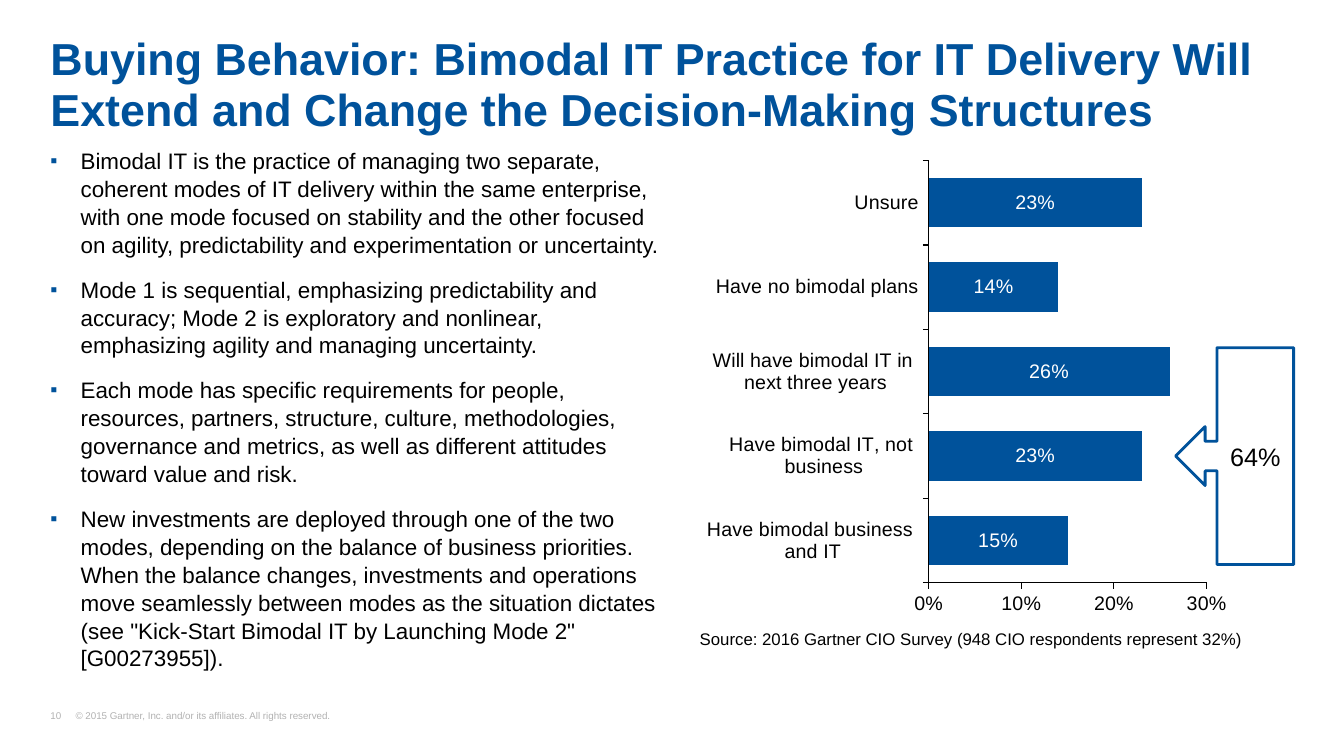
from lxml.etree import SubElement
from pptx import Presentation
from pptx.chart.data import CategoryChartData
from pptx.dml.color import RGBColor
from pptx.enum.chart import XL_CHART_TYPE, XL_LABEL_POSITION, XL_TICK_MARK
from pptx.enum.shapes import MSO_SHAPE
from pptx.enum.text import MSO_ANCHOR, PP_ALIGN
from pptx.oxml import parse_xml
from pptx.oxml.ns import nsdecls, qn
from pptx.util import Inches, Pt

BLUE = RGBColor(0x00, 0x52, 0x9B)
BLACK = RGBColor(0x00, 0x00, 0x00)
WHITE = RGBColor(0xFF, 0xFF, 0xFF)
GRAY = RGBColor(0xB2, 0xB2, 0xB2)

deck = Presentation()
deck.slide_width, deck.slide_height = Inches(13.33), Inches(7.5)
page = deck.slides.add_slide(deck.slide_layouts[6])

# Left edges of the two halves and top of the content, in percent of the slide
LEFT, RIGHT, TOP = 3.75, 52.06, 19.33


def share(left, top, width, height):
    """Turn percentages of the slide into lengths."""
    across, down = deck.slide_width / 100, deck.slide_height / 100
    return [int(left * across), int(top * down), int(width * across), int(height * down)]


def write(shape, lines, size, color, bold=False, insets=(0, 0, 0, 0), frame_format=None, para_format=None):
    """Fill a shape with one paragraph per line and return the paragraphs."""
    frame = shape.text_frame
    sides = ("margin_left", "margin_top", "margin_right", "margin_bottom")
    frame_values = dict(zip(sides, map(Inches, insets)), word_wrap=True)
    for name, value in (frame_values | (frame_format or {})).items():
        setattr(frame, name, value)
    frame.text = "\n".join(lines)
    for para in frame.paragraphs:
        for name, value in (para_format or {}).items():
            setattr(para, name, value)
        for span in para.runs:
            for name, value in {"name": "Arial", "size": Pt(size), "bold": bold}.items():
                setattr(span.font, name, value)
            span.font.color.rgb = color
    return frame.paragraphs


# Footer: page number, tab, copyright
footer = page.shapes.add_textbox(*share(LEFT, 94, 25.13, 1.47))
footer_para = write(
    footer, ["10\t© 2015 Gartner, Inc. and/or its affiliates. All rights reserved."], 7, GRAY,
    frame_format={"vertical_anchor": MSO_ANCHOR.BOTTOM}, para_format={"line_spacing": 0.9},
)[0]
tabs = SubElement(footer_para._p.get_or_add_pPr(), qn("a:tabLst"))
SubElement(tabs, qn("a:tab"), pos=str(Inches(0.25)), algn="l")

# Title
title = page.shapes.add_textbox(*share(LEFT, 3.33, 92.5, 14.27))
write(
    title,
    ["Buying Behavior: Bimodal IT Practice for IT Delivery Will Extend and Change the Decision-Making Structures"],
    32, BLUE, bold=True, insets=(0, 0.1, 0, 0), para_format={"line_spacing": 0.94},
)

# Bulleted text
points = [
    "Bimodal IT is the practice of managing two separate, coherent modes of IT delivery within the same "
    "enterprise, with one mode focused on stability and the other focused on agility, predictability and "
    "experimentation or uncertainty.",
    "Mode 1 is sequential, emphasizing predictability and accuracy; Mode 2 is exploratory and nonlinear, "
    "emphasizing agility and managing uncertainty.",
    "Each mode has specific requirements for people, resources, partners, structure, culture, methodologies, "
    "governance and metrics, as well as different attitudes toward value and risk.",
    "New investments are deployed through one of the two modes, depending on the balance of business "
    "priorities. When the balance changes, investments and operations move seamlessly between modes as the "
    "situation dictates (see \"Kick-Start Bimodal IT by Launching Mode 2\" [G00273955]).",
]
body = page.shapes.add_textbox(*share(LEFT, TOP, 46.06, 70.67))
body_paras = write(
    body, points, 16, BLACK, insets=(0, 0, 0.05, 0),
    para_format={"line_spacing": 1.04, "space_after": Pt(12)},
)
for para in body_paras:
    properties = para._p.get_or_add_pPr()
    properties.set("marL", str(Inches(0.3)))
    properties.set("indent", str(-Inches(0.3)))
    bullet_color = SubElement(properties, qn("a:buClr"))
    SubElement(bullet_color, qn("a:srgbClr"), val=str(BLUE))
    SubElement(properties, qn("a:buSzPct"), val="90000")
    SubElement(properties, qn("a:buFont"), typeface="Arial")
    SubElement(properties, qn("a:buChar"), char="▪")

# Survey chart
survey = CategoryChartData(number_format="0%")
survey.categories = [
    "Have bimodal business \nand IT",
    "Have bimodal IT, not \nbusiness",
    "Will have bimodal IT in \nnext three years",
    "Have no bimodal plans",
    "Unsure",
]
survey.add_series("Series 1", [0.15, 0.23, 0.26, 0.14, 0.23])
chart = page.shapes.add_chart(
    XL_CHART_TYPE.BAR_STACKED, *share(RIGHT, TOP, 40.96, 62.93), survey
).chart
chart.has_legend = chart.has_title = False

plot = chart.plots[0]
plot_format = {"gap_width": 70, "overlap": 100, "vary_by_categories": False, "has_data_labels": True}
for name, value in plot_format.items():
    setattr(plot, name, value)
bars = plot.series[0].format.fill
bars.solid()
bars.fore_color.rgb = BLUE

labels = plot.data_labels
label_format = {
    "show_value": True, "position": XL_LABEL_POSITION.CENTER,
    "number_format": "0%", "number_format_is_linked": False,
}
for name, value in label_format.items():
    setattr(labels, name, value)

for axis, line_width in ((chart.category_axis, 1), (chart.value_axis, 0.75)):
    axis.has_major_gridlines = False
    axis.major_tick_mark = XL_TICK_MARK.OUTSIDE
    axis.minor_tick_mark = XL_TICK_MARK.NONE
    axis.format.line.color.rgb = BLACK
    axis.format.line.width = Pt(line_width)
scale = {"minimum_scale": 0, "maximum_scale": 0.3, "major_unit": 0.1}
for name, value in scale.items():
    setattr(chart.value_axis, name, value)
chart.value_axis.tick_labels.number_format = "0%"
chart.value_axis.tick_labels.number_format_is_linked = False

chart_fonts = (
    (chart.font, BLACK),
    (chart.category_axis.tick_labels.font, BLACK),
    (chart.value_axis.tick_labels.font, BLACK),
    (labels.font, WHITE),
)
for font, color in chart_fonts:
    font.name, font.size, font.color.rgb = "Arial", Pt(14), color

# Inner plot area, in percent of the chart
area = {"x": 41.6, "y": 3, "w": 50.5, "h": 88.8}
modes = "".join(f'<c:{side}Mode val="edge"/>' for side in "xy")
lengths = "".join(f'<c:{side} val="{percent / 100:.3f}"/>' for side, percent in area.items())
plot_area = chart._chartSpace.chart.plotArea
for layout in plot_area.findall(qn("c:layout")):
    plot_area.remove(layout)
plot_area.insert(0, parse_xml(
    f'<c:layout {nsdecls("c")}><c:manualLayout><c:layoutTarget val="inner"/>'
    f"{modes}{lengths}</c:manualLayout></c:layout>"
))

# Source line under the chart
source = page.shapes.add_textbox(*share(RIGHT, 82.8, 41.41, 3.73))
write(
    source, ["Source: 2016 Gartner CIO Survey (948 CIO respondents represent 32%)"], 12, BLACK,
    insets=(0, 0.05, 0.1, 0.05), frame_format={"word_wrap": False}, para_format={"line_spacing": 0.9},
)

# Callout with the sum of the three bimodal answers
callout = page.shapes.add_shape(MSO_SHAPE.LEFT_ARROW_CALLOUT, *share(87.47, 46, 8.78, 28.67))
callout.shadow.inherit = False
callout.fill.solid()
callout.fill.fore_color.rgb = WHITE
callout.line.color.rgb = BLUE
callout.line.width = Pt(2)
write(
    callout, ["64%"], 18, BLACK, insets=(0.1, 0.05, 0.1, 0.05),
    frame_format={"word_wrap": False, "vertical_anchor": MSO_ANCHOR.MIDDLE},
    para_format={"alignment": PP_ALIGN.CENTER},
)

deck.save("out.pptx")
